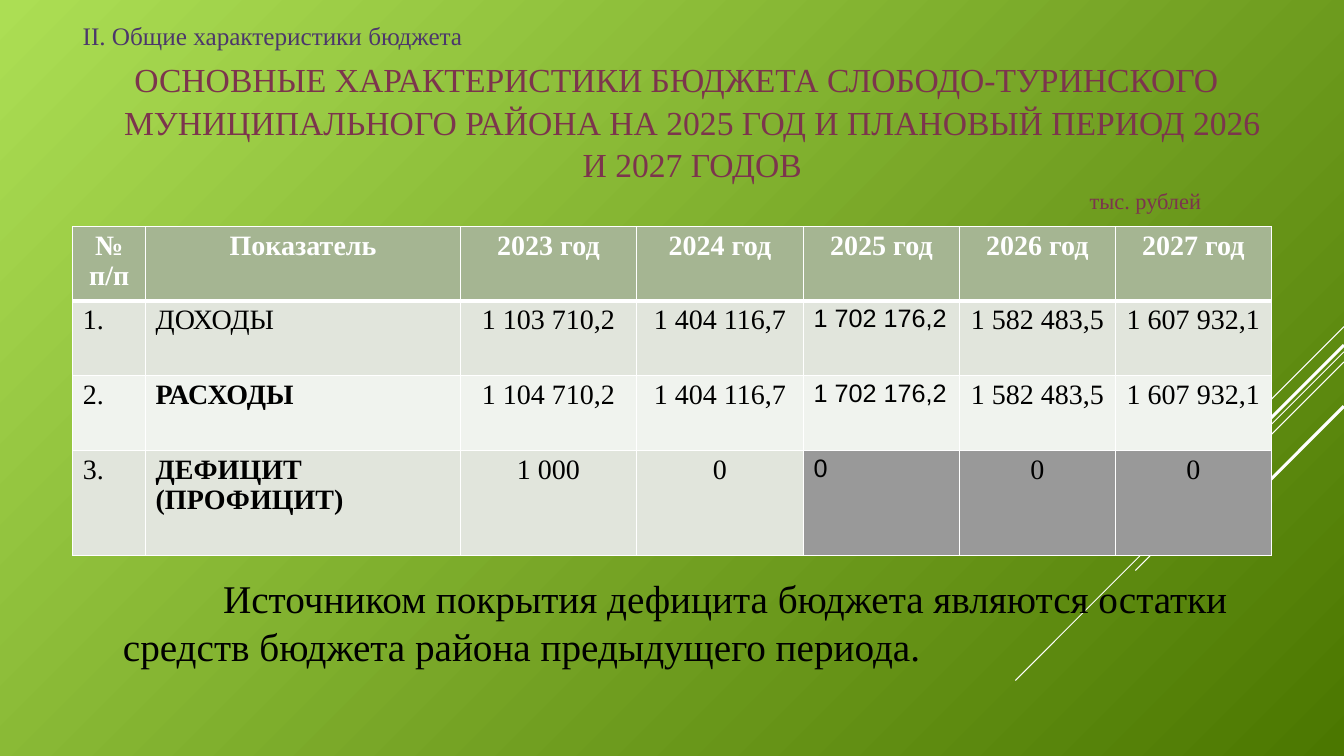
from lxml.etree import SubElement
from pptx import Presentation
from pptx.dml.color import RGBColor
from pptx.enum.shapes import MSO_CONNECTOR
from pptx.enum.text import MSO_ANCHOR, MSO_AUTO_SIZE, PP_ALIGN
from pptx.oxml.ns import qn
from pptx.util import Pt

SERIF = "Times New Roman"
SLIDE_WIDTH, SLIDE_HEIGHT = 960, 540
LEFT, WIDTH = 52, 856


def colour(value):
    return RGBColor.from_string(value)


def write_text(frame, text, size=20, font=SERIF, color="000000", bold=False,
               align=PP_ALIGN.LEFT, anchor=MSO_ANCHOR.TOP, spacing=1.0,
               margin=0, indent=0):
    frame.word_wrap = True
    frame.vertical_anchor = anchor
    paragraph = frame.paragraphs[0]
    paragraph.alignment = align
    paragraph.line_spacing = spacing
    properties = paragraph._p.get_or_add_pPr()
    properties.set("marL", str(Pt(margin)))
    properties.set("indent", str(Pt(indent)))
    run = paragraph.add_run()
    run.text = text
    run.font.size = Pt(size)
    run.font.name = font
    run.font.bold = bold
    run.font.color.rgb = colour(color)


presentation = Presentation()
presentation.slide_width = Pt(SLIDE_WIDTH)
presentation.slide_height = Pt(SLIDE_HEIGHT)
slide = presentation.slides.add_slide(presentation.slide_layouts[5])

# Background gradient
background = slide.background.fill
background.gradient()
background.gradient_angle = 315
for stop, value in zip(background.gradient_stops, ("ACDE54", "4B7700")):
    stop.color.rgb = colour(value)

# Diagonal lines from the right edge: start height, run, line width
diagonals = [(233.3, 72, 0.75), (251.3, 234.7, 0.75), (258.5, 149, 0.75),
             (246.5, 137.5, 2.25), (290.2, 100, 2.25)]
for top, run_length, line_width in diagonals:
    line = slide.shapes.add_connector(
        MSO_CONNECTOR.STRAIGHT, Pt(SLIDE_WIDTH), Pt(top),
        Pt(SLIDE_WIDTH - run_length), Pt(top + run_length))
    line.line.color.rgb = colour("FFFFFF")
    line.line.width = Pt(line_width)
    SubElement(line._element.spPr, qn("a:effectLst"))

# Title
title = slide.shapes.title
title.left, title.top, title.width, title.height = Pt(LEFT), Pt(37.4), Pt(WIDTH), Pt(94)
title.text_frame.auto_size = MSO_AUTO_SIZE.NONE
write_text(title.text_frame,
           "ОСНОВНЫЕ ХАРАКТЕРИСТИКИ БЮДЖЕТА СЛОБОДО-ТУРИНСКОГО "
           "МУНИЦИПАЛЬНОГО РАЙОНА НА 2025 ГОД И ПЛАНОВЫЙ ПЕРИОД 2026 И 2027 ГОДОВ",
           size=24, color="7C354D", align=PP_ALIGN.CENTER, spacing=1.05,
           margin=28.8, indent=-22.3)

# Budget table
header = ["№ п/п", "Показатель"] + [f"{year} год" for year in range(2023, 2028)]
rows = [
    header,
    ["1.", "ДОХОДЫ", "1 103 710,2", "1 404 116,7", "1 702 176,2", "1 582 483,5", "1 607 932,1"],
    ["2.", "РАСХОДЫ", "1 104 710,2", "1 404 116,7", "1 702 176,2", "1 582 483,5", "1 607 932,1"],
    ["3.", "ДЕФИЦИТ (ПРОФИЦИТ)", "1 000", "0", "0", "0", "0"],
]
column_widths = [52, 225, 125.6, 119.4, 111.4, 111.4, 111.4]
row_heights = [53, 53.5, 53.5, 75]
row_fills = ["A5B592", "E1E5DC", "F0F3EE", "E1E5DC"]
CURRENT_YEAR = 4

table = slide.shapes.add_table(len(rows), len(header), Pt(LEFT), Pt(162),
                               Pt(WIDTH), Pt(sum(row_heights))).table
table.horz_banding = False
for column, width in zip(table.columns, column_widths):
    column.width = Pt(width)

for row_index, values in enumerate(rows):
    table.rows[row_index].height = Pt(row_heights[row_index])
    for column_index, value in enumerate(values):
        cell = table.cell(row_index, column_index)
        is_header = row_index == 0
        is_current = column_index == CURRENT_YEAR and not is_header
        centred = is_header or (column_index > 1 and not is_current)
        write_text(cell.text_frame, value,
                   size=18 if is_current else 20,
                   font="Arial" if is_current else SERIF,
                   color="FFFFFF" if is_header else "000000",
                   bold=is_header or (column_index == 1 and row_index > 1),
                   align=PP_ALIGN.CENTER if centred else PP_ALIGN.LEFT,
                   spacing=0.96)
        # White borders, thick under the header
        cell_properties = cell._tc.get_or_add_tcPr()
        for side in ("lnL", "lnR", "lnT", "lnB"):
            thick = (row_index, side) in ((0, "lnB"), (1, "lnT"))
            border = SubElement(cell_properties, qn(f"a:{side}"),
                                w=str(Pt(3 if thick else 0.96)))
            border_fill = SubElement(border, qn("a:solidFill"))
            SubElement(border_fill, qn("a:srgbClr"), val="FFFFFF")
        cell.fill.solid()
        is_grey = row_index == 3 and column_index >= CURRENT_YEAR
        cell.fill.fore_color.rgb = colour("999999" if is_grey else row_fills[row_index])

# Section name, unit and note: text, box, format
text_boxes = [
    ("II. Общие характеристики бюджета", (LEFT, 14, WIDTH, 23),
     dict(size=18, color="4C376B", anchor=MSO_ANCHOR.MIDDLE)),
    ("тыс. рублей", (700, 130, 165, 26),
     dict(size=16, color="7C354D", align=PP_ALIGN.RIGHT)),
    ("Источником покрытия дефицита бюджета являются остатки средств "
     "бюджета района предыдущего периода.", (LEFT, 405, WIDTH, 71),
     dict(size=28, spacing=1.04, margin=28.8, indent=71.5)),
]
for text, box, text_format in text_boxes:
    shape = slide.shapes.add_textbox(*map(Pt, box))
    write_text(shape.text_frame, text, **text_format)

presentation.save("out.pptx")
